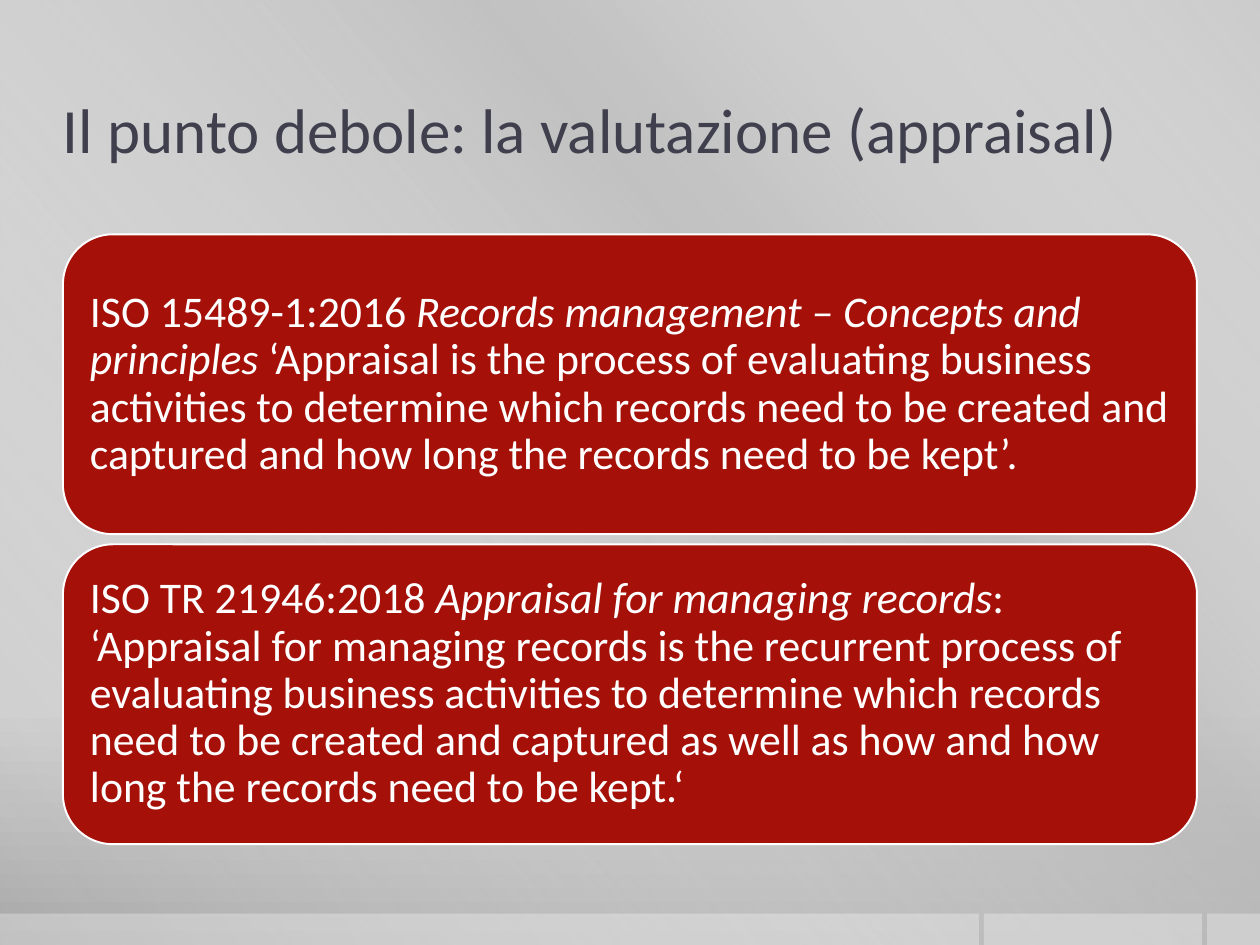
from dataclasses import dataclass

import lxml.etree
import pptx
import pptx.dml.color
import pptx.enum.shapes
import pptx.enum.text
import pptx.oxml.ns
import pptx.util

qn = pptx.oxml.ns.qn
RGB = pptx.dml.color.RGBColor.from_string
SHAPE = pptx.enum.shapes.MSO_SHAPE
ANCHOR = pptx.enum.text.MSO_ANCHOR
ALIGN = pptx.enum.text.PP_ALIGN
In = pptx.util.Inches
WIDTH, HEIGHT = 10, 7.5


@dataclass(frozen=True)
class Theme:
    font: str = "Calibri"
    title: str = "3F3F4D"
    card: str = "A51009"
    light: str = "FFFFFF"
    title_size: float = 36
    body_size: float = 25
    line_width: float = 1.1


@dataclass(frozen=True)
class Stop:
    pos: int
    color: str
    alpha: int = 100


@dataclass(frozen=True)
class Run:
    text: str
    italic: bool = False


@dataclass(frozen=True)
class Box:
    """Left, top, width and height in inches."""
    x: float
    y: float
    w: float
    h: float

    def emu(self) -> list:
        return [In(v) for v in (self.x, self.y, self.w, self.h)]


THEME = Theme()
BACKDROP = [Stop(0, "CBCBCB"), Stop(76, "C8C8C8"), Stop(100, "A7A7A7")]
SHEEN = [Stop(0, "FFFFFF", 0), Stop(34, "BFBFBF", 61),
         Stop(38, "BFBFBF", 76), Stop(100, "FFFFFF", 0)]
FOOTER_SPANS = [(0, 7.77), (7.81, 9.54), (9.58, WIDTH)]
FOOTER_TOP = 7.25
MARGIN = 0.5
CONTENT_W = WIDTH - 2 * MARGIN
CARD_TOP, CARD_H, CARD_GAP = 1.86, 2.38, 0.08
CARDS = [
    [Run("ISO 15489-1:2016 "),
     Run("Records management – Concepts and principles ", True),
     Run("‘Appraisal is the process of evaluating business activities to "
         "determine which records need to be created and captured and how "
         "long the records need to be kept’.")],
    [Run("ISO TR 21946:2018 "),
     Run("Appraisal for managing records", True),
     Run(": ‘Appraisal for managing records is the recurrent process of "
         "evaluating business activities to determine which records need to "
         "be created and captured as well as how and how long the records "
         "need to be kept.‘")],
]


def add_color(parent, color: str, alpha: int) -> None:
    clr = lxml.etree.SubElement(parent, qn("a:srgbClr"), val=color)
    if alpha < 100:
        lxml.etree.SubElement(clr, qn("a:alpha"), val=str(alpha * 1000))


def set_gradient(fill, owner, stops: list[Stop], angle: int) -> None:
    """Replace the default stops by ones with transparency."""
    fill.gradient()
    grad = next(owner.iter(qn("a:gradFill")))
    for child in list(grad):
        grad.remove(child)
    gs_list = lxml.etree.SubElement(grad, qn("a:gsLst"))
    for stop in stops:
        gs = lxml.etree.SubElement(gs_list, qn("a:gs"), pos=str(stop.pos * 1000))
        add_color(gs, stop.color, stop.alpha)
    lxml.etree.SubElement(grad, qn("a:lin"), ang=str(angle * 60000), scaled="0")


def add_panel(s, box: Box, kind=SHAPE.RECTANGLE):
    sp = s.shapes.add_shape(kind, *box.emu())
    sp.shadow.inherit = False
    sp.line.fill.background()
    return sp


def write(sp, runs: list[Run], size: float, color: str, inset_x: float,
          inset_y: float, spacing: float = 1.0) -> None:
    tf = sp.text_frame
    frame = {"word_wrap": True, "vertical_anchor": ANCHOR.MIDDLE,
             "margin_left": In(inset_x), "margin_right": In(inset_x),
             "margin_top": In(inset_y), "margin_bottom": In(inset_y)}
    for name, value in frame.items():
        setattr(tf, name, value)
    p = tf.paragraphs[0]
    p.alignment, p.line_spacing = ALIGN.LEFT, spacing
    for run in runs:
        r = p.add_run()
        r.text = run.text
        r.font.color.rgb = RGB(color)
        for name, value in {"name": THEME.font, "size": pptx.util.Pt(size),
                            "italic": run.italic}.items():
            setattr(r.font, name, value)


def add_card(s, row: int, runs: list[Run]) -> None:
    top = CARD_TOP + row * (CARD_H + CARD_GAP)
    sp = add_panel(s, Box(MARGIN, top, CONTENT_W, CARD_H), SHAPE.ROUNDED_RECTANGLE)
    sp.fill.solid()
    sp.fill.fore_color.rgb = RGB(THEME.card)
    sp.line.color.rgb = RGB(THEME.light)
    sp.line.width = pptx.util.Pt(THEME.line_width)
    write(sp, runs, THEME.body_size, THEME.light, 0.1, 0.1, 0.9)


def main() -> None:
    prs = pptx.Presentation()
    prs.slide_width, prs.slide_height = In(WIDTH), In(HEIGHT)
    s = prs.slides.add_slide(prs.slide_layouts[6])

    # Background with a diagonal sheen
    set_gradient(s.background.fill, s._element, BACKDROP, 90)
    sheen = add_panel(s, Box(0, 0, WIDTH, HEIGHT))
    set_gradient(sheen.fill, sheen._element, SHEEN, 140)

    # Footer strip
    for left, right in FOOTER_SPANS:
        bar = add_panel(s, Box(left, FOOTER_TOP, right - left, HEIGHT - FOOTER_TOP))
        bar.fill.solid()
        bar.fill.fore_color.rgb = RGB(THEME.light)
        clr = next(bar._element.iter(qn("a:srgbClr")))
        lxml.etree.SubElement(clr, qn("a:alpha"), val="30000")

    # Title
    title = s.shapes.add_textbox(*Box(MARGIN, 0.52, CONTENT_W, 1).emu())
    write(title, [Run("Il punto debole: la valutazione (appraisal)")],
          THEME.title_size, THEME.title, 0, 0.05)

    # Quotations from the standards
    for row, runs in enumerate(CARDS):
        add_card(s, row, runs)

    prs.save("out.pptx")


if __name__ == "__main__":
    main()
